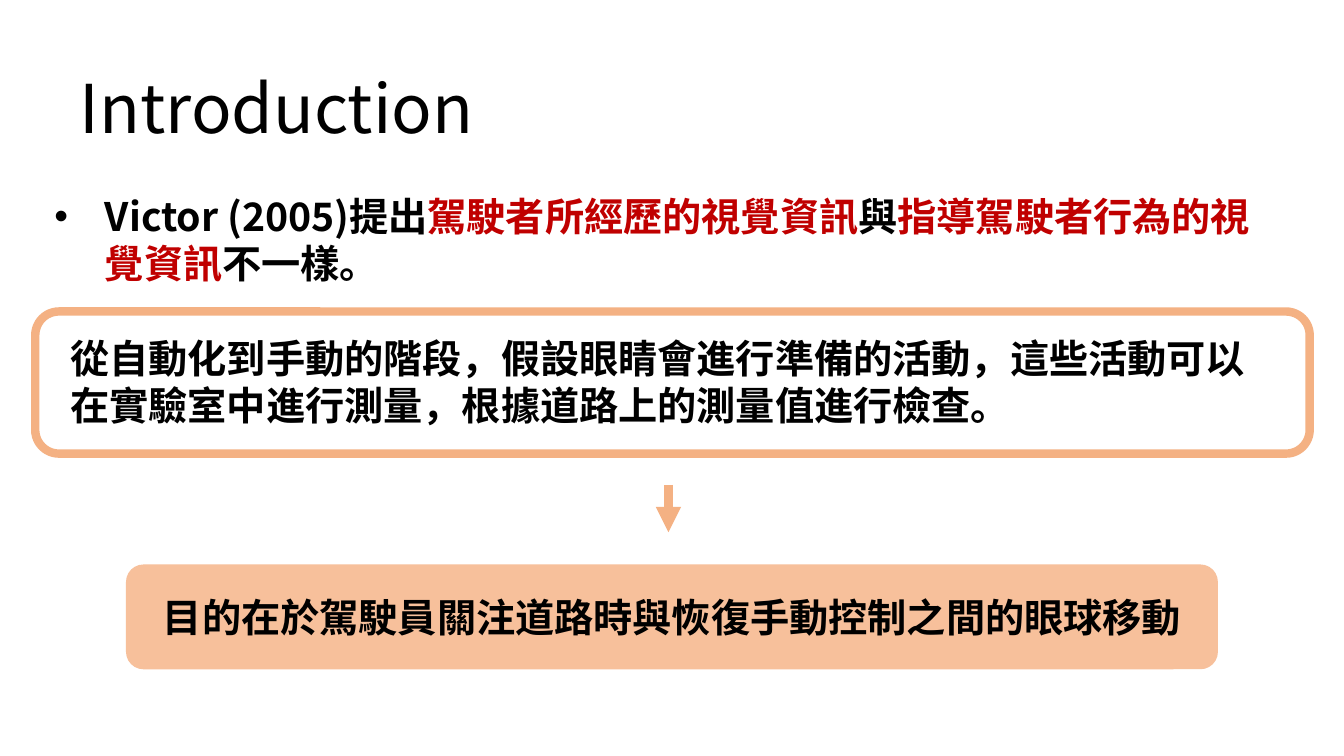
import pptx
import pptx.util
import pptx.dml.color
import pptx.enum.shapes
import pptx.enum.text
import pptx.oxml.ns
import lxml.etree

Inches, Pt = pptx.util.Inches, pptx.util.Pt
RGBColor = pptx.dml.color.RGBColor
SHAPE = pptx.enum.shapes.MSO_SHAPE
ALIGN = pptx.enum.text.PP_ALIGN
ANCHOR = pptx.enum.text.MSO_ANCHOR
qn = pptx.oxml.ns.qn

BLACK = RGBColor(0x00, 0x00, 0x00)
RED = RGBColor(0xC0, 0x00, 0x00)
ORANGE = RGBColor(0xF4, 0xB1, 0x83)
PEACH = RGBColor(0xF7, 0xC0, 0x9B)
FONT = "Noto Sans CJK SC"

# Content
TITLE = [("Introduction", BLACK)]
FINDING = [
    ("Victor (2005)提出", BLACK),
    ("駕駛者所經歷的視覺資訊", RED),
    ("與", BLACK),
    ("指導駕駛者行為的視覺資訊", RED),
    ("不一樣。", BLACK),
]
HYPOTHESIS = [("從自動化到手動的階段，假設眼睛會進行準備的活動，"
               "這些活動可以在實驗室中進行測量，根據道路上的測量值進行檢查。", BLACK)]
PURPOSE = [("目的在於駕駛員關注道路時與恢復手動控制之間的眼球移動", BLACK)]

# Places: left, top, width, height in inches
TITLE_AT = (0.69, 0.61, 4.27, 0.91)
FINDING_AT = (0.44, 1.86, 12.13, 1.04)
HYPOTHESIS_AT = (0.6, 3.27, 12.13, 1.04)
FRAME_AT = (0.35, 3.09, 12.64, 1.41)
PURPOSE_AT = (1.25, 5.6, 10.83, 1.04)
ARROW_X, ARROW_TOP, ARROW_BOTTOM = 6.63, 4.81, 5.28


def inches(place):
    return [Inches(length) for length in place]


def move(holder, place):
    holder.left, holder.top, holder.width, holder.height = inches(place)


def write(frame, runs, size=28, bold=True, align=ALIGN.LEFT, anchor=ANCHOR.TOP):
    frame.word_wrap = True
    frame.auto_size = pptx.enum.text.MSO_AUTO_SIZE.NONE
    frame.vertical_anchor = anchor
    paragraph = frame.paragraphs[0]
    paragraph.alignment = align
    paragraph.space_before = Pt(0)
    for text, color in runs:
        run = paragraph.add_run()
        run.text = text
        run.font.size, run.font.bold, run.font.name = Pt(size), bold, FONT
        run.font.color.rgb = color
        east_asian = lxml.etree.SubElement(run.font._element, qn("a:ea"))
        east_asian.set("typeface", FONT)
    return paragraph


def add_rounded(slide, place):
    box = slide.shapes.add_shape(SHAPE.ROUNDED_RECTANGLE, *inches(place))
    box.shadow.inherit = False
    return box


def main():
    deck = pptx.Presentation()
    deck.slide_width, deck.slide_height = Inches(13.33), Inches(7.5)
    slide = deck.slides.add_slide(deck.slide_layouts[1])

    # Title
    title = slide.shapes.title
    move(title, TITLE_AT)
    write(title.text_frame, TITLE, size=48, bold=False)

    # Bulleted finding
    finding = slide.placeholders[1]
    move(finding, FINDING_AT)
    properties = write(finding.text_frame, FINDING)._p.get_or_add_pPr()
    properties.set("marL", str(Inches(0.5)))
    properties.set("indent", str(-Inches(0.5)))
    lxml.etree.SubElement(properties, qn("a:buFont")).set("typeface", "Arial")
    lxml.etree.SubElement(properties, qn("a:buChar")).set("char", "•")

    # Framed hypothesis
    hypothesis = slide.shapes.add_textbox(*inches(HYPOTHESIS_AT))
    write(hypothesis.text_frame, HYPOTHESIS)
    frame = add_rounded(slide, FRAME_AT)
    frame.fill.background()
    frame.line.color.rgb = ORANGE
    frame.line.width = Pt(6)

    # Arrow down to the purpose
    arrow = slide.shapes.add_connector(
        pptx.enum.shapes.MSO_CONNECTOR.STRAIGHT,
        *inches((ARROW_X, ARROW_TOP, ARROW_X, ARROW_BOTTOM)))
    arrow.line.color.rgb = ORANGE
    arrow.line.width = Pt(6)
    line = arrow.line._get_or_add_ln()
    lxml.etree.SubElement(line, qn("a:tailEnd")).set("type", "triangle")
    lxml.etree.SubElement(arrow._element.spPr, qn("a:effectLst"))

    # Purpose
    purpose = add_rounded(slide, PURPOSE_AT)
    purpose.fill.solid()
    purpose.fill.fore_color.rgb = PEACH
    purpose.line.fill.background()
    write(purpose.text_frame, PURPOSE, align=ALIGN.CENTER, anchor=ANCHOR.MIDDLE)

    deck.save("out.pptx")


if __name__ == "__main__":
    main()
